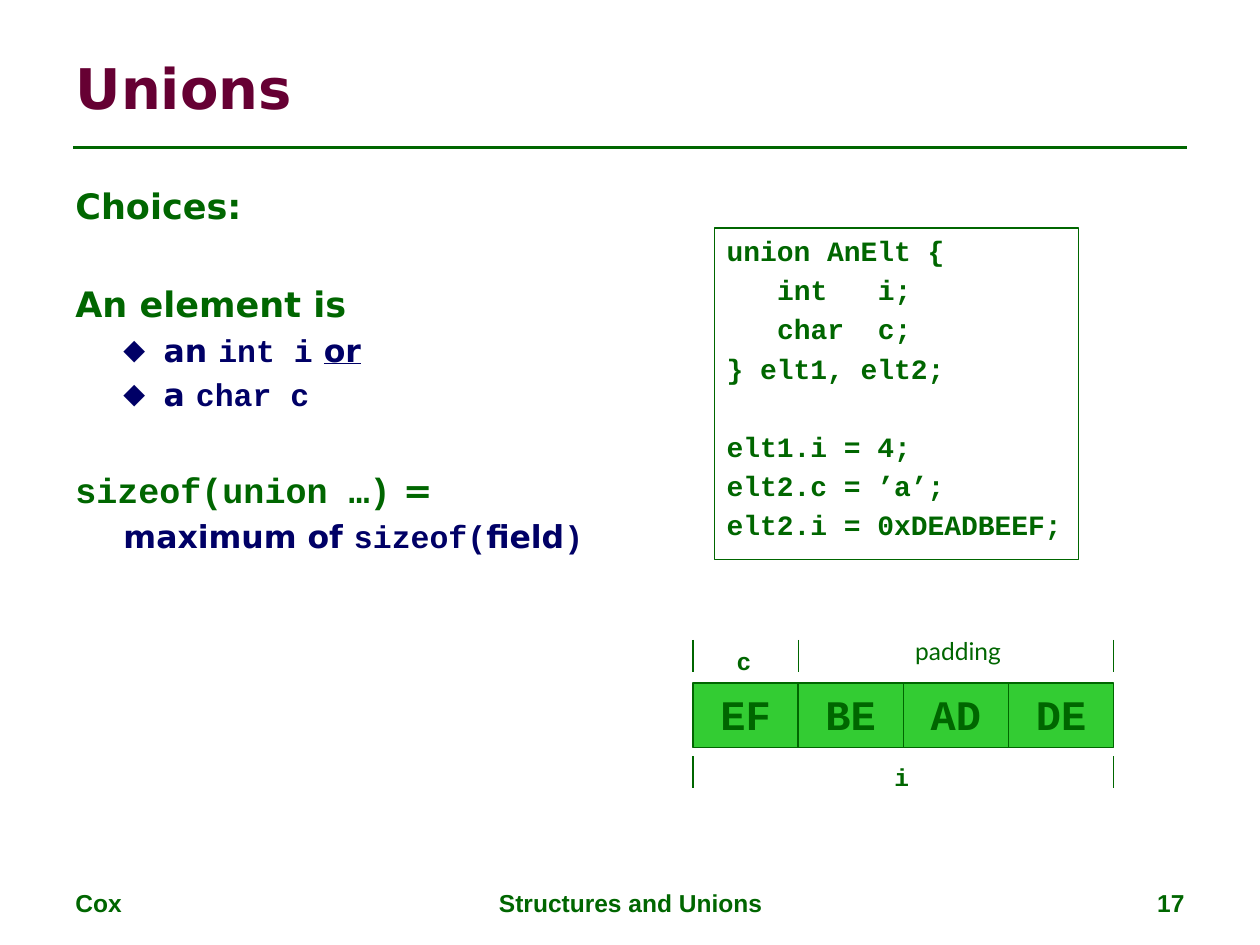
"""Build the slide on C unions: choices, code sample and byte layout."""
from dataclasses import dataclass, field

from lxml.etree import SubElement
from pptx import Presentation
from pptx.dml.color import RGBColor
from pptx.enum.shapes import MSO_CONNECTOR, MSO_SHAPE
from pptx.enum.text import MSO_ANCHOR, MSO_AUTO_SIZE, PP_ALIGN
from pptx.oxml.ns import qn
from pptx.slide import Slide
from pptx.text.text import TextFrame
from pptx.util import Cm, Pt

GREEN = RGBColor(0x00, 0x66, 0x00)
NAVY = RGBColor(0x00, 0x00, 0x66)
MAROON = RGBColor(0x66, 0x00, 0x33)
BYTE_GREEN = RGBColor(0x33, 0xCC, 0x33)
SANS, MONO, FOOTER_FONT, LABEL_FONT = "DejaVu Sans", "Courier New", "Arial", "Lato"


@dataclass
class Span:
    """A run of text with its format."""
    text: str
    name: str = SANS
    size: float = 20
    color: RGBColor = GREEN
    bold: bool = True
    underline: bool = False


@dataclass
class Line:
    """A paragraph with its spans, spacing and indents."""
    spans: list[Span]
    before: float = 0
    align: PP_ALIGN = PP_ALIGN.LEFT
    level: int = 0
    bullet: str = ""
    tabs: list[float] = field(default_factory=list)


@dataclass
class Box:
    """Place and size in centimetres."""
    left: float
    top: float
    width: float
    height: float

    def lengths(self) -> list[Cm]:
        """Return the four lengths in drawing order."""
        return [Cm(v) for v in (self.left, self.top, self.width, self.height)]


def detail(text: str, name: str = SANS, underline: bool = False) -> Span:
    """Return a span of second-level text."""
    return Span(text, name, 18, NAVY, underline=underline)


def write(frame: TextFrame, lines: list[Line], **frame_format) -> None:
    """Fill a text frame with formatted lines."""
    settings = {"auto_size": MSO_AUTO_SIZE.NONE, "word_wrap": True,
                "vertical_anchor": MSO_ANCHOR.TOP} | frame_format
    for key, value in settings.items():
        setattr(frame, key, value)
    for index, line in enumerate(lines):
        paragraph = frame.add_paragraph() if index else frame.paragraphs[0]
        layout = {"alignment": line.align, "level": line.level,
                  "space_before": Pt(line.before)}
        for key, value in layout.items():
            setattr(paragraph, key, value)
        properties = paragraph._p.get_or_add_pPr()
        if line.level:
            properties.set("marL", str(Cm(1.78)))
            properties.set("indent", str(Cm(-0.81)))
        if line.bullet:
            SubElement(properties, qn("a:buSzPct"), val="90000")
            SubElement(properties, qn("a:buFont"), typeface=SANS)
            SubElement(properties, qn("a:buChar"), char=line.bullet)
        if line.tabs:
            stops = SubElement(properties, qn("a:tabLst"))
            for stop in line.tabs:
                SubElement(stops, qn("a:tab"), pos=str(Pt(stop)), algn="l")
        for span in line.spans:
            run = paragraph.add_run()
            run.text = span.text
            run.font.color.rgb = span.color
            font_format = {"name": span.name, "size": Pt(span.size),
                           "bold": span.bold, "underline": span.underline}
            for key, value in font_format.items():
                setattr(run.font, key, value)


def add_text(slide: Slide, box: Box, lines: list[Line], **frame_format) -> None:
    """Add a text box."""
    write(slide.shapes.add_textbox(*box.lengths()).text_frame, lines, **frame_format)


def add_rectangle(slide: Slide, box: Box, lines: list[Line],
                  fill: RGBColor | None = None, **frame_format) -> None:
    """Add an outlined rectangle that holds text."""
    rectangle = slide.shapes.add_shape(MSO_SHAPE.RECTANGLE, *box.lengths())
    rectangle.shadow.inherit = False
    rectangle.line.color.rgb = GREEN
    rectangle.line.width = Pt(0.75)
    if fill is None:
        rectangle.fill.background()
    else:
        rectangle.fill.solid()
        rectangle.fill.fore_color.rgb = fill
    write(rectangle.text_frame, lines, **frame_format)


def add_rule(slide: Slide, x1: float, y1: float, x2: float, y2: float,
             width: float = 0.75) -> None:
    """Add a straight green line."""
    rule = slide.shapes.add_connector(
        MSO_CONNECTOR.STRAIGHT, Cm(x1), Cm(y1), Cm(x2), Cm(y2))
    rule.line.color.rgb = GREEN
    rule.line.width = Pt(width)
    SubElement(rule._element.spPr, qn("a:effectLst"))


def add_byte_layout(slide: Slide) -> None:
    """Draw the four bytes of the union with its member extents."""
    left, step, top = 13.97, 2.12, 13.77
    for index, value in enumerate(["EF", "BE", "AD", "DE"]):
        add_rectangle(slide, Box(left + index * step, top, step, 1.3),
                      [Line([Span(value, MONO, 24)], align=PP_ALIGN.CENTER)],
                      BYTE_GREEN, margin_top=Cm(0.1), margin_bottom=0)
    for tick_top, edges in ((12.9, (0, 1, 4)), (15.24, (0, 4))):
        for edge in edges:
            x = left + edge * step
            add_rule(slide, x, tick_top, x, tick_top + 0.64)
    labels = [
        (Box(14.6, 12.9, 0.81, 0.84), Span("c", MONO, 14)),
        (Box(17.78, 15.24, 0.81, 0.84), Span("i", MONO, 14)),
        (Box(18.2, 12.7, 2.26, 0.84), Span("padding", LABEL_FONT, 14, bold=False)),
    ]
    for box, span in labels:
        add_text(slide, box, [Line([span])], word_wrap=False)


def main() -> None:
    """Build and save the slide."""
    deck = Presentation()
    deck.slide_width, deck.slide_height = Cm(25.4), Cm(19.05)
    slide = deck.slides.add_slide(deck.slide_layouts[5])

    title = slide.shapes.title
    title.left, title.top, title.width, title.height = Box(1.27, 0.76, 22.86, 1.98).lengths()
    write(title.text_frame, [Line([Span("Unions", size=32, color=MAROON)])],
          vertical_anchor=MSO_ANCHOR.MIDDLE)
    add_rule(slide, 1.48, 2.97, 23.93, 2.97, 1.5)

    item_gap, section_gap = 3.6, 32
    choices = [
        Line([Span("Choices:")]),
        Line([Span("An element is")], section_gap),
        Line([detail("an "), detail("int i", MONO), detail(" "),
              detail("or", underline=True)], item_gap, level=1, bullet="◆"),
        Line([detail("a "), detail("char c", MONO)], item_gap, level=1, bullet="◆"),
        Line([Span("sizeof(union …)", MONO), Span(" =")], section_gap),
        Line([detail("maximum of "), detail("sizeof(", MONO), detail("field"),
              detail(")", MONO)], item_gap, level=1),
    ]
    add_text(slide, Box(1.27, 3.59, 11.2, 13.41), choices)

    code_gap, block_gap = 3.2, 25.5
    statements = [
        ("union AnElt {", 0), ("\tint\ti;", code_gap), ("\tchar\tc;", code_gap),
        ("} elt1, elt2;", code_gap), ("elt1.i = 4;", block_gap),
        ("elt2.c = ’a’;", code_gap), ("elt2.i = 0xDEADBEEF;", code_gap),
    ]
    code = [Line([Span(text, MONO, 16)], before, tabs=[28.8, 86.4] if "\t" in text else [])
            for text, before in statements]
    add_rectangle(slide, Box(14.4, 4.6, 7.34, 6.68), code,
                  word_wrap=False, margin_top=Cm(0.11))
    add_byte_layout(slide)

    footers = [
        ("Cox", 1.27, 5.92, PP_ALIGN.LEFT),
        ("Structures and Unions", 8.69, 8.05, PP_ALIGN.CENTER),
        ("17", 18.21, 5.92, PP_ALIGN.RIGHT),
    ]
    for text, left, width, align in footers:
        add_text(slide, Box(left, 17.78, width, 0.89),
                 [Line([Span(text, FOOTER_FONT, 14)], align=align)])
    deck.save("out.pptx")


if __name__ == "__main__":
    main()
